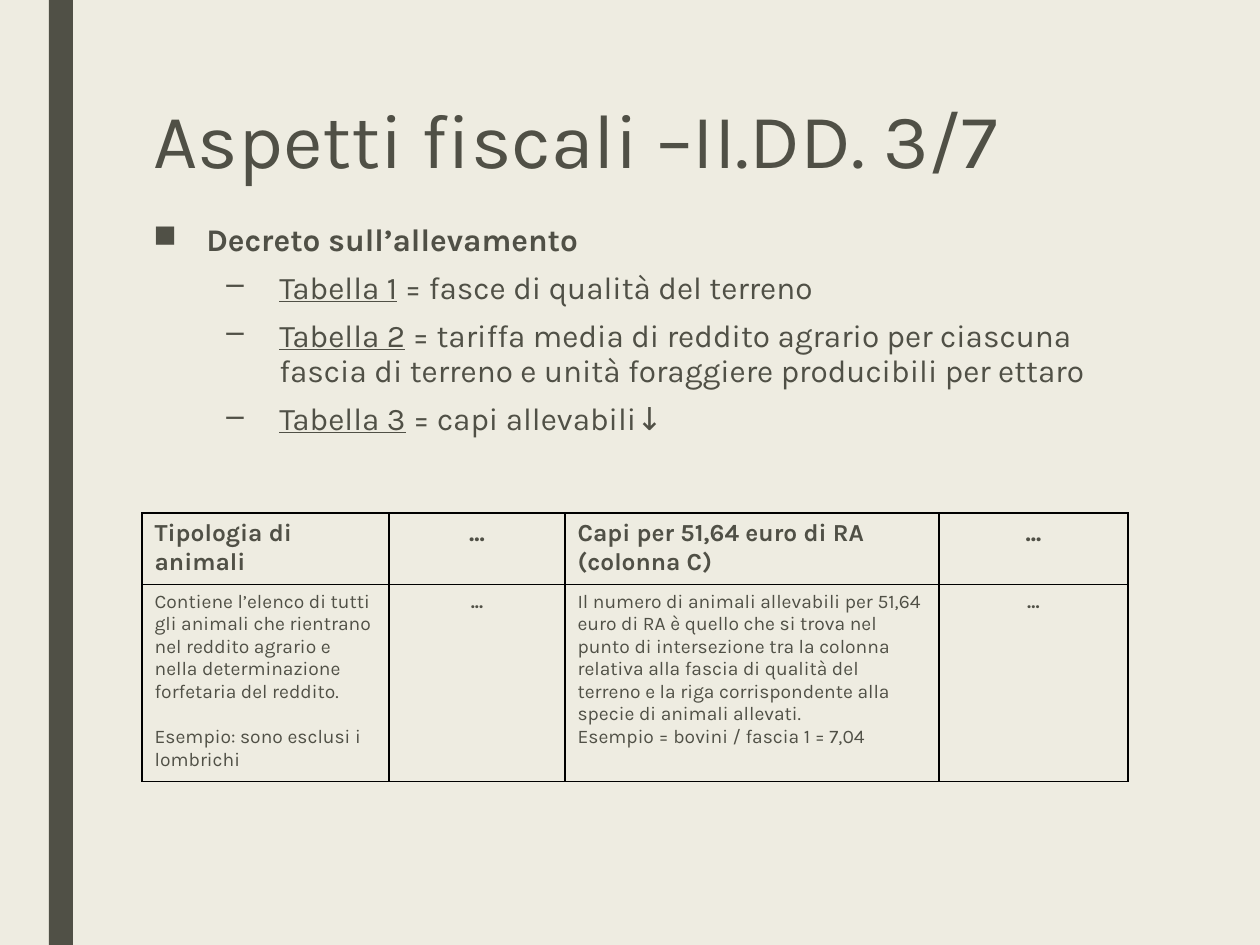
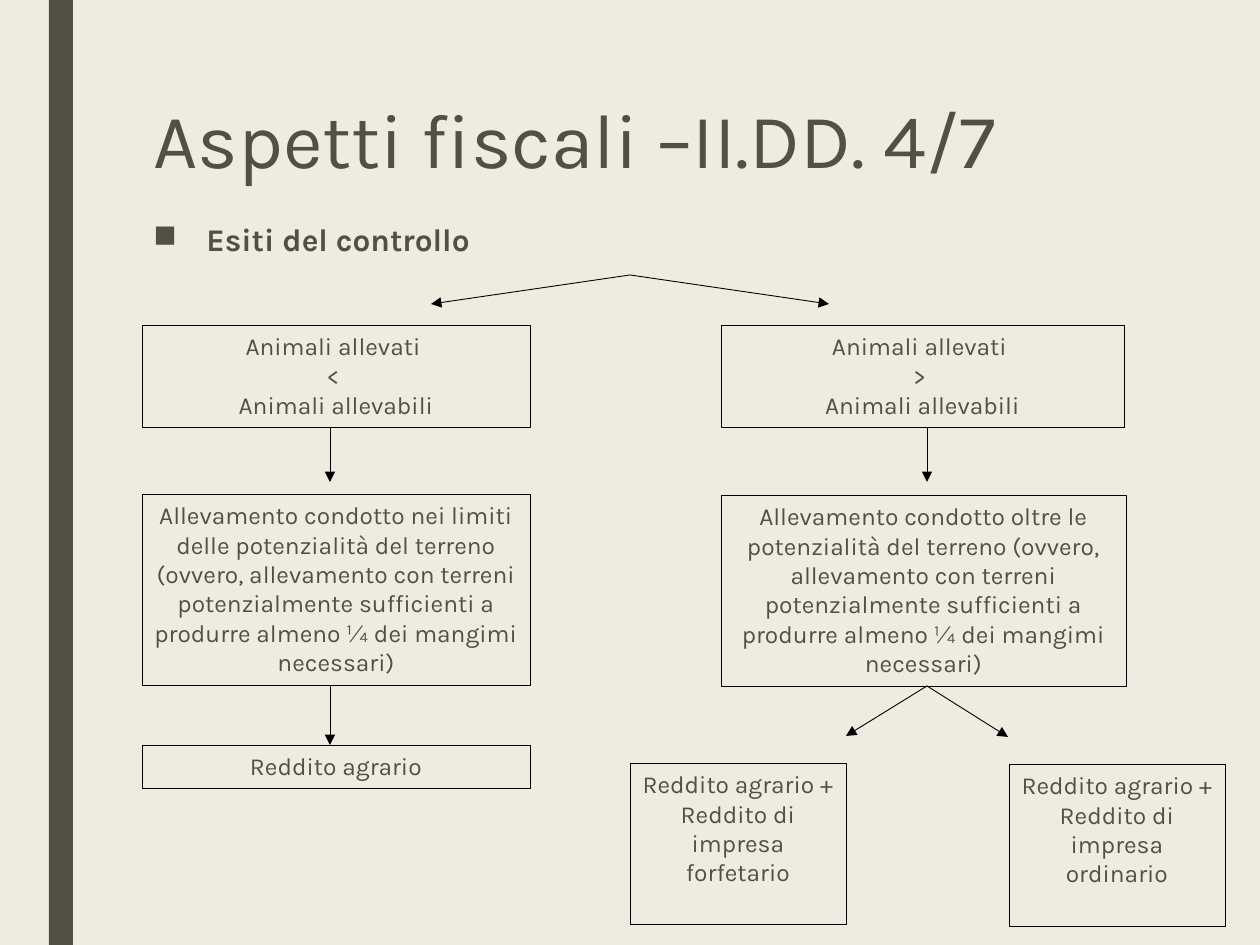
"""Build two slides on livestock taxation: a rules table and a control flowchart."""
from dataclasses import dataclass

from lxml import etree
from pptx import Presentation
from pptx.dml.color import RGBColor
from pptx.enum.shapes import MSO_CONNECTOR, MSO_SHAPE
from pptx.enum.text import MSO_ANCHOR, PP_ALIGN
from pptx.oxml.ns import qn
from pptx.util import Emu, Pt

STRAIGHT = MSO_CONNECTOR.STRAIGHT
RECTANGLE = MSO_SHAPE.RECTANGLE
TOP, MIDDLE = MSO_ANCHOR.TOP, MSO_ANCHOR.MIDDLE
LEFT, CENTER = PP_ALIGN.LEFT, PP_ALIGN.CENTER
SCALE = 914400 / 126


@dataclass(frozen=True)
class Theme:
    font: str = "Karla"
    ink: RGBColor = RGBColor(0x50, 0x50, 0x46)
    paper: RGBColor = RGBColor(0xEE, 0xEC, 0xE1)
    line: RGBColor = RGBColor(0, 0, 0)
    title: int = 44
    body: int = 18
    label: int = 14
    note: int = 11


THEME = Theme()


def px(*lengths):
    return [Emu(round(length * SCALE)) for length in lengths]


def write(para, text, size, bold=False, underline=False):
    span = para.add_run()
    span.text = text
    font = span.font
    font.name, font.size = THEME.font, Pt(size)
    font.bold, font.underline = bold, underline
    font.color.rgb = THEME.ink


OUTLINES = [
    ("Aspetti fiscali –II.DD. 3/7", [
        (0, "Decreto sull’allevamento", ""),
        (1, "Tabella 1", " = fasce di qualità del terreno"),
        (1, "Tabella 2", " = tariffa media di reddito agrario per ciascuna "
                         "fascia di terreno e unità foraggiere producibili per ettaro"),
        (1, "Tabella 3", " = capi allevabili↓"),
    ]),
    ("Aspetti fiscali –II.DD. 4/7", [(0, "Esiti del controllo", "")]),
]
LEVELS = [("■", 53, 10), ("–", 126, 5)]
HANGING = 53

deck = Presentation()
deck.slide_width, deck.slide_height = px(1260, 945)
background = deck.slide_master.background.fill
background.solid()
background.fore_color.rgb = THEME.paper

pages = []
for heading, points in OUTLINES:
    page = deck.slides.add_slide(deck.slide_layouts[5])
    pages.append(page)

    band = page.shapes.add_shape(RECTANGLE, *px(49, 0, 24, 945))
    band.shadow.inherit = False
    band.fill.solid()
    band.fill.fore_color.rgb = THEME.ink
    band.line.fill.background()

    title = page.shapes.title
    title.left, title.top, title.width, title.height = px(141, 94, 993, 99)
    title.text_frame.vertical_anchor = MIDDLE
    para = title.text_frame.paragraphs[0]
    para.alignment = LEFT
    para.line_spacing = 0.89
    write(para, heading, THEME.title)

    body = page.shapes.add_textbox(*px(141, 217, 993, 592)).text_frame
    body.word_wrap = True
    for index, (level, lead, rest) in enumerate(points):
        bullet, margin, before = LEVELS[level]
        para = body.add_paragraph() if index else body.paragraphs[0]
        para.level = level
        para.line_spacing = 0.94
        para.space_before, para.space_after = Pt(before), Pt(2)
        properties = para._p.get_or_add_pPr()
        properties.set("marL", str(px(margin)[0]))
        properties.set("indent", str(px(-HANGING)[0]))
        etree.SubElement(properties, qn("a:buChar"), char=bullet)
        write(para, lead, THEME.body, bold=level == 0, underline=level == 1)
        if rest:
            write(para, rest, THEME.body)

rules_page, outcome_page = pages

COLUMNS = [247, 176, 374, 189]
ROWS = [70, 192]
CELLS = [
    [["Tipologia di animali"], ["..."],
     ["Capi per 51,64 euro di RA (colonna C)"], ["..."]],
    [["Contiene l’elenco di tutti gli animali che rientrano nel reddito agrario "
      "e nella determinazione forfetaria del reddito.",
      "Esempio: sono esclusi i lombrichi"],
     ["..."],
     ["Il numero di animali allevabili per 51,64 euro di RA è quello che si trova "
      "nel punto di intersezione tra la colonna relativa alla fascia di qualità del "
      "terreno e la riga corrispondente alla specie di animali allevati.",
      "Esempio = bovini / fascia 1 = 7,04"],
     ["..."]],
]
table = rules_page.shapes.add_table(
    len(ROWS), len(COLUMNS), *px(142, 513, sum(COLUMNS), sum(ROWS))).table
table.first_row = table.horz_banding = False
for column, width in zip(table.columns, px(*COLUMNS)):
    column.width = width
for row, height in zip(table.rows, px(*ROWS)):
    row.height = height
for row_index, row_texts in enumerate(CELLS):
    for column_index, texts in enumerate(row_texts):
        cell = table.cell(row_index, column_index)
        cell.fill.background()
        properties = cell._tc.get_or_add_tcPr()
        for position, side in enumerate(["a:lnL", "a:lnR", "a:lnT", "a:lnB"]):
            border = etree.Element(qn(side), w=str(Pt(1)))
            fill = etree.SubElement(border, qn("a:solidFill"))
            etree.SubElement(fill, qn("a:srgbClr"), val=str(THEME.line))
            properties.insert(position, border)
        dots = texts == ["..."]
        for index, text in enumerate(texts):
            para = cell.text_frame.add_paragraph() if index else cell.text_frame.paragraphs[0]
            para.alignment = CENTER if dots else LEFT
            if index and column_index == 0:
                para.space_before = Pt(13)
            write(para, text, THEME.note if row_index else THEME.label,
                  bold=dots or row_index == 0)

BOXES = [
    (142, 325, 388, 102, ["Animali allevati ", "< ", "Animali allevabili"]),
    (721, 325, 403, 102, ["Animali allevati ", "> ", "Animali allevabili"]),
    (142, 494, 388, 191, [
        "Allevamento condotto nei limiti delle potenzialità del terreno (ovvero, "
        "allevamento con terreni potenzialmente sufficienti a produrre almeno ¼ "
        "dei mangimi necessari)"]),
    (142, 745, 388, 43, ["Reddito agrario"]),
    (721, 495, 405, 191, [
        "Allevamento condotto oltre le potenzialità del terreno (ovvero, "
        "allevamento con terreni potenzialmente sufficienti a produrre almeno ¼ "
        "dei mangimi necessari)"]),
    (630, 763, 216, 161, ["Reddito agrario +", "Reddito di impresa forfetario"]),
    (1009, 764, 216, 162, ["Reddito agrario +", "Reddito di impresa ordinario"]),
]
ARROWS = [
    (630, 275, 431, 304), (630, 275, 829, 304),
    (330, 427, 330, 482), (927, 427, 927, 482),
    (330, 685, 330, 745),
    (927, 686, 846, 736), (927, 686, 1008, 737),
]
for *place, texts in BOXES:
    box = outcome_page.shapes.add_shape(RECTANGLE, *px(*place))
    box.shadow.inherit = False
    box.fill.background()
    box.line.color.rgb = THEME.line
    box.line.width = Pt(0.25)
    frame = box.text_frame
    frame.word_wrap = True
    frame.vertical_anchor = TOP
    frame.margin_left, frame.margin_right = px(11, 11)
    for index, text in enumerate(texts):
        para = frame.add_paragraph() if index else frame.paragraphs[0]
        para.alignment = CENTER
        write(para, text, THEME.label)

for ends in ARROWS:
    arrow = outcome_page.shapes.add_connector(STRAIGHT, *px(*ends))
    arrow.line.color.rgb = THEME.line
    arrow.line.width = Pt(0.5)
    etree.SubElement(arrow.line._get_or_add_ln(), qn("a:tailEnd"), type="triangle")
    etree.SubElement(arrow._element.spPr, qn("a:effectLst"))

deck.save("out.pptx")
